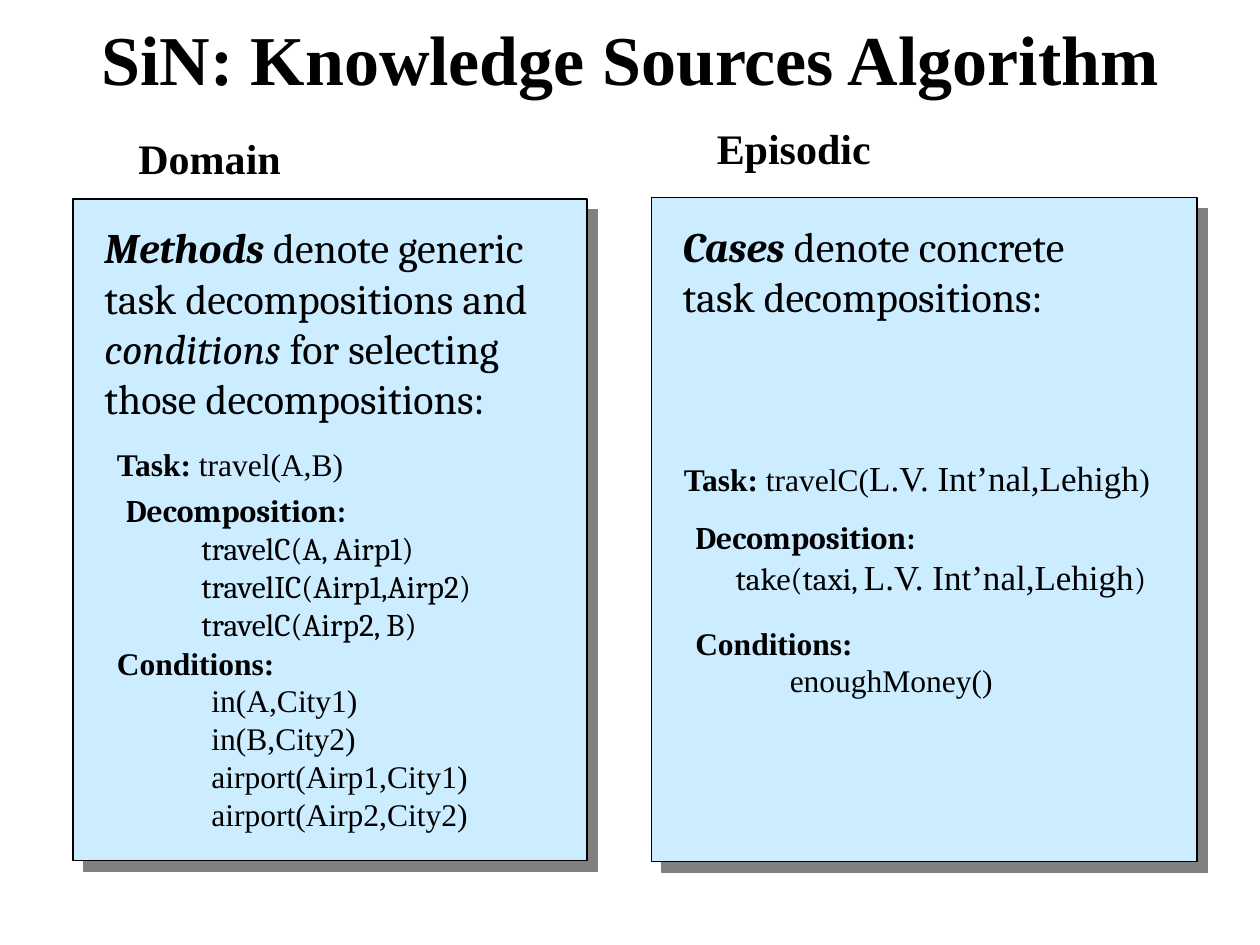
from lxml.etree import SubElement
from pptx import Presentation
from pptx.dml.color import RGBColor
from pptx.enum.shapes import MSO_SHAPE
from pptx.enum.text import MSO_ANCHOR, PP_ALIGN
from pptx.oxml.ns import qn
from pptx.util import Inches, Pt

SERIF = "Times New Roman"
CAMBRIA = "Cambria"
BLACK = "000000"
PANEL_FILL = "CCECFF"
SHADOW = "808080"


def color(hex_string):
    return RGBColor.from_string(hex_string)


def format_run(run, font, size, bold=False, italic=False):
    run.font.name = font
    run.font.size = Pt(size)
    run.font.bold = bold
    run.font.italic = italic
    run.font.color.rgb = color(BLACK)


def add_title(slide, text, left, top, width, height):
    title = slide.shapes.title
    title.left, title.top = Inches(left), Inches(top)
    title.width, title.height = Inches(width), Inches(height)
    frame = title.text_frame
    frame.text = text
    frame.word_wrap = True
    frame.vertical_anchor = MSO_ANCHOR.TOP
    frame.margin_top = Inches(0.12)
    paragraph = frame.paragraphs[0]
    paragraph.alignment = PP_ALIGN.CENTER
    format_run(paragraph.runs[0], SERIF, 40, bold=True)


def add_text(slide, left, top, width, height, paragraphs, font=SERIF, size=18, wrap=False):
    """Each paragraph is (indent, runs); each run is (text, style letters, font and size overrides)."""
    box = slide.shapes.add_textbox(Inches(left), Inches(top), Inches(width), Inches(height))
    frame = box.text_frame
    frame.word_wrap = wrap
    for index, (indent, runs) in enumerate(paragraphs):
        paragraph = frame.paragraphs[0] if index == 0 else frame.add_paragraph()
        if indent:
            paragraph._p.get_or_add_pPr().set("marL", str(Inches(indent)))
        for text, style, *overrides in runs:
            run = paragraph.add_run()
            run.text = text
            run_font, run_size = overrides or (font, size)
            format_run(run, run_font, run_size, "b" in style, "i" in style)


def add_panel(slide, left, top, width, height):
    panel = slide.shapes.add_shape(
        MSO_SHAPE.RECTANGLE, Inches(left), Inches(top), Inches(width), Inches(height))
    panel.fill.solid()
    panel.fill.fore_color.rgb = color(PANEL_FILL)
    panel.line.color.rgb = color(BLACK)
    panel.line.width = Pt(0.75)
    panel.shadow.inherit = False
    effects = panel._element.spPr.find(qn("a:effectLst"))
    shadow = SubElement(effects, qn("a:outerShdw"), dist=str(Pt(8.5)),
                        dir=str(45 * 60000), algn="ctr", rotWithShape="0")
    SubElement(shadow, qn("a:srgbClr"), val=SHADOW)


def add_heading_and_intro(slide, left, top, heading_top, heading, intro, intro_height):
    add_text(slide, left + 0.42, heading_top, 1.42, 0.5, [(0, [(heading, "b")])], size=24)
    add_text(slide, left + 0.15, top + 0.13, 3.85, intro_height, [(0, intro)],
             CAMBRIA, 24, wrap=True)


def labelled_list(label, indent, lines):
    return [(0, [(label, "b")])] + [(indent, [(line, "")]) for line in lines]


def add_domain(slide, left, top, width, height):
    add_panel(slide, left, top, width, height)
    add_heading_and_intro(
        slide, left, top, top - 0.58, "Domain",
        [("Methods", "bi"), (" denote generic task decompositions and ", ""),
         ("conditions", "i"), (" for selecting those decompositions:", "")], 1.7)
    add_text(slide, left + 0.25, top + 1.9, 2.02, 0.4,
             [(0, [("Task: ", "b"), ("travel(A,B)", "")])])
    add_text(slide, left + 0.32, top + 2.27, 3.1, 1.3,
             labelled_list("Decomposition:", 0.6, [
                 "travelC(A, Airp1)", "travelIC(Airp1,Airp2)", "travelC(Airp2, B)"]), CAMBRIA)
    add_text(slide, left + 0.25, top + 3.48, 2.99, 1.6,
             labelled_list("Conditions:", 0.75, [
                 "in(A,City1)", "in(B,City2)", "airport(Airp1,City1)", "airport(Airp2,City2)"]))


def add_episodic(slide, left, top, width, height):
    places = ("L.V. Int’nal,Lehigh", "", SERIF, 20)
    add_panel(slide, left, top, width, height)
    add_heading_and_intro(
        slide, left, top, top - 0.65, "Episodic",
        [("Cases", "bi"), (" denote concrete task decompositions:", "")], 0.9)
    add_text(slide, left + 0.16, top + 2, 3.95, 0.43,
             [(0, [("Task: ", "b"), ("travelC(", ""), places, (")", "")])])
    add_text(slide, left + 0.25, top + 2.49, 3.83, 0.74,
             [(0, [("Decomposition:", "b")]),
              (0.32, [("take(taxi, ", ""), places, (")", "")])], CAMBRIA)
    add_text(slide, left + 0.25, top + 3.33, 4, 0.7,
             labelled_list("Conditions:", 0.75, ["enoughMoney()"]), wrap=True)


def main():
    presentation = Presentation()
    presentation.slide_width, presentation.slide_height = Inches(10), Inches(7.5)
    slide = presentation.slides.add_slide(presentation.slide_layouts[5])
    add_title(slide, "SiN: Knowledge Sources Algorithm", 0.5, 0, 9, 1.25)
    add_episodic(slide, 5.17, 1.57, 4.33, 5.27)
    add_domain(slide, 0.58, 1.58, 4.08, 5.25)
    presentation.save("out.pptx")


if __name__ == "__main__":
    main()
